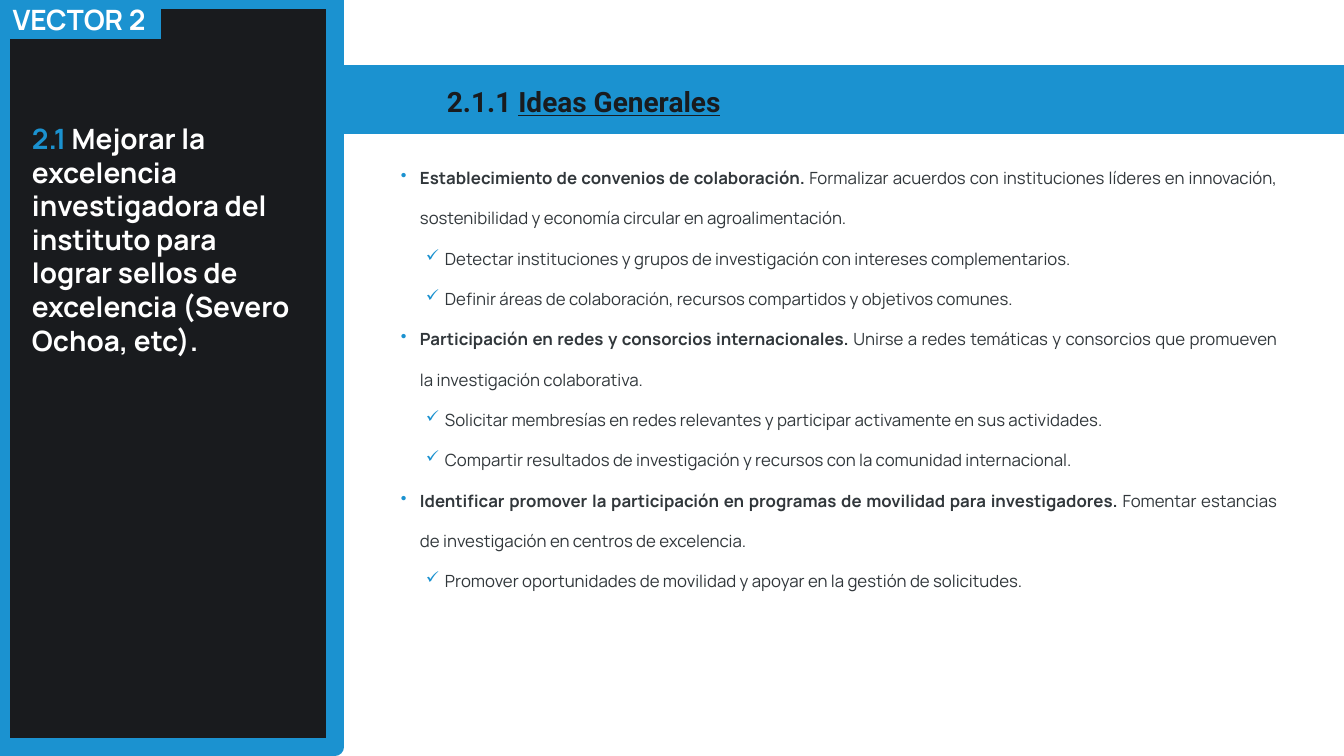
"""Build the Vector 2 slide on general ideas for research excellence."""
from dataclasses import dataclass

from lxml import etree
from pptx import Presentation
from pptx import util as u
from pptx.dml.color import RGBColor
from pptx.enum import shapes, text
from pptx.oxml.ns import qn

PX = 914400 / 50.4


def px(length):
    return u.Emu(round(length * PX))


@dataclass(frozen=True)
class Theme:
    blue: str = "1B92D0"
    dark: str = "191B1E"
    body: str = "31373B"
    white: str = "FFFFFF"
    text_font: str = "Manrope"
    heading_font: str = "Roboto"
    heading_size: int = 40
    body_size: int = 24
    frame_width: float = 25.25


class SlideBuilder:
    def __init__(self, slide, theme):
        self.slide = slide
        self.theme = theme

    def rectangle(self, box, fill=None, line=None):
        shape = self.slide.shapes.add_shape(
            shapes.MSO_SHAPE.RECTANGLE, *map(px, box))
        shape.shadow.inherit = False
        if fill:
            shape.fill.solid()
            shape.fill.fore_color.rgb = RGBColor.from_string(fill)
        else:
            shape.fill.background()
        if line:
            shape.line.color.rgb = RGBColor.from_string(line)
            shape.line.width = u.Pt(self.theme.frame_width)
        else:
            shape.line.fill.background()
        return shape

    def text_box(self, box, inset=5):
        frame = self.slide.shapes.add_textbox(*map(px, box)).text_frame
        frame.word_wrap = True
        frame.auto_size = text.MSO_AUTO_SIZE.SHAPE_TO_FIT_TEXT
        frame.margin_left = frame.margin_right = px(inset)
        return frame

    def label(self, box, fill, align):
        frame = self.rectangle(box, fill).text_frame
        frame.word_wrap = True
        frame.auto_size = text.MSO_AUTO_SIZE.SHAPE_TO_FIT_TEXT
        frame.vertical_anchor = text.MSO_ANCHOR.MIDDLE
        frame.paragraphs[0].alignment = align
        return frame

    def style(self, paragraph, size, color=None, font=None, bold=None):
        paragraph.font.name = font or self.theme.text_font
        paragraph.font.size = u.Pt(size)
        paragraph.font.bold = bold
        if color:
            paragraph.font.color.rgb = RGBColor.from_string(color)

    def run(self, paragraph, words, color=None, bold=None, underline=None):
        run = paragraph.add_run()
        run.text = words
        run.font.bold = bold
        run.font.underline = underline
        if color:
            run.font.color.rgb = RGBColor.from_string(color)

    def bullet(self, paragraph, mark, left, hanging=19):
        paragraph.alignment = text.PP_ALIGN.JUSTIFY
        paragraph.line_spacing = 2.0
        properties = paragraph._p.get_or_add_pPr()
        properties.set("marL", str(px(left)))
        properties.set("indent", str(-px(hanging)))
        tint = etree.SubElement(properties, qn("a:buClr"))
        etree.SubElement(tint, qn("a:srgbClr"), val=self.theme.blue)
        etree.SubElement(properties, qn("a:buChar"), char=mark)
        self.style(paragraph, self.theme.body_size, self.theme.body)

    def ideas(self, box, ideas):
        frame = self.text_box(box)
        paragraph = frame.paragraphs[0]
        for number, (lead, detail, actions) in enumerate(ideas):
            if number:
                paragraph = frame.add_paragraph()
            self.bullet(paragraph, "•", 19)
            self.run(paragraph, lead + " ", bold=True)
            self.run(paragraph, detail)
            for action in actions:
                step = frame.add_paragraph()
                step.level = 1
                self.bullet(step, "✓", 44)
                self.run(step, action)


IDEAS = [
    ("Establecimiento de convenios de colaboración.",
     "Formalizar acuerdos con instituciones líderes en innovación, "
     "sostenibilidad y economía circular en agroalimentación.",
     ["Detectar instituciones y grupos de investigación con intereses complementarios.",
      "Definir áreas de colaboración, recursos compartidos y objetivos comunes."]),
    ("Participación en redes y consorcios internacionales.",
     "Unirse a redes temáticas y consorcios que promueven la investigación colaborativa.",
     ["Solicitar membresías en redes relevantes y participar activamente en sus actividades.",
      "Compartir resultados de investigación y recursos con la comunidad internacional."]),
    ("Identificar promover la participación en programas de movilidad para investigadores.",
     "Fomentar estancias de investigación en centros de excelencia.",
     ["Promover oportunidades de movilidad y apoyar en la gestión de solicitudes."]),
]


def main():
    theme = Theme()
    deck = Presentation()
    deck.slide_width, deck.slide_height = px(1344), px(756)
    builder = SlideBuilder(deck.slides.add_slide(deck.slide_layouts[6]), theme)

    builder.rectangle((0, 0, 335, 756), theme.dark)
    builder.rectangle((335, 65, 1009, 69), theme.blue)
    heading = builder.label(
        (442, 82, 855, 39), theme.blue, text.PP_ALIGN.LEFT).paragraphs[0]
    builder.style(heading, theme.heading_size, font=theme.heading_font, bold=True)
    builder.run(heading, "2.1.1 ", theme.dark)
    builder.run(heading, "Ideas Generales", theme.dark, underline=True)

    builder.rectangle((1, 0, 334, 747), line=theme.blue)
    builder.ideas((396, 145, 886, 447), IDEAS)

    vector = builder.label(
        (-3, 0, 164, 39), theme.blue, text.PP_ALIGN.CENTER).paragraphs[0]
    builder.style(vector, theme.heading_size, theme.white, bold=True)
    builder.run(vector, "VECTOR 2")

    goal = builder.text_box((20, 119, 288, 242), inset=12).paragraphs[0]
    builder.style(goal, theme.heading_size, bold=True)
    builder.run(goal, "2.1 ", theme.blue)
    builder.run(goal, "Mejorar la excelencia investigadora del instituto para "
                "lograr sellos de excelencia (Severo Ochoa, etc).", theme.white)

    deck.save("out.pptx")


if __name__ == "__main__":
    main()
